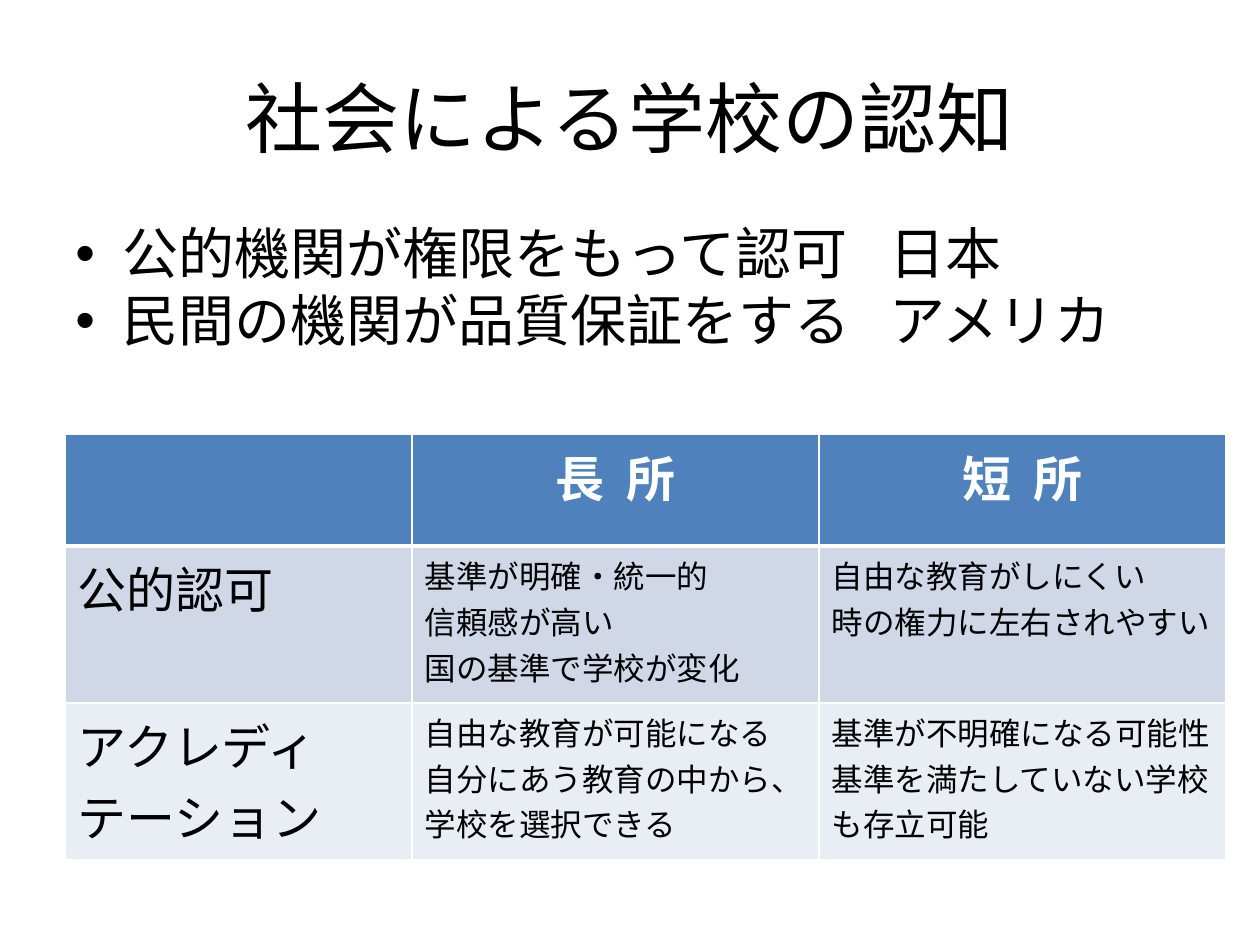
from dataclasses import dataclass

import lxml.etree
import pptx
import pptx.dml.color
import pptx.enum.text
import pptx.oxml.ns
import pptx.util

PX = 914400 // 126


@dataclass(frozen=True)
class Theme:
    font: str = "Calibri"
    black: str = "000000"
    white: str = "FFFFFF"
    header_fill: str = "4F81BD"
    row_fills: tuple[str, ...] = ("D0D8E8", "E9EDF4")
    title_size: int = 44
    bullet_size: int = 32
    label_size: int = 28
    detail_size: int = 18


@dataclass(frozen=True)
class Box:
    left: int
    top: int
    width: int
    height: int

    def emu(self) -> tuple[int, ...]:
        return tuple(v * PX for v in (self.left, self.top, self.width, self.height))


@dataclass(frozen=True)
class TableRow:
    label: str
    strengths: str
    weaknesses: str


THEME = Theme()
ALIGN = pptx.enum.text.PP_ALIGN
TITLE_BOX = Box(63, 38, 1134, 158)
BULLET_BOX = Box(63, 220, 1134, 624)
TABLE_BOX = Box(65, 434, 1161, 426)
COLUMN_WIDTHS = (347, 407, 407)
ROW_HEIGHTS = (112, 157, 157)
BULLET_INDENT = 47
COUNTRY_TAB = 814

BULLETS = ("公的機関が権限をもって認可\t日本", "民間の機関が品質保証をする\tアメリカ")
HEADINGS = ("", "長 所", "短 所")
ROWS = (
    TableRow("公的認可", "基準が明確・統一的\n信頼感が高い\n国の基準で学校が変化",
             "自由な教育がしにくい\n時の権力に左右されやすい"),
    TableRow("アクレディテーション", "自由な教育が可能になる\n自分にあう教育の中から、学校を選択できる",
             "基準が不明確になる可能性\n基準を満たしていない学校も存立可能"),
)


def add_child(parent, tag: str, **attributes):
    return lxml.etree.SubElement(parent, pptx.oxml.ns.qn(tag), attributes)


def format_text(text_frame, size: int, color: str = THEME.black, bold: bool = False, align=ALIGN.LEFT) -> None:
    for paragraph in text_frame.paragraphs:
        paragraph.alignment = align
        for run in paragraph.runs:
            run.font.name = THEME.font
            run.font.size = pptx.util.Pt(size)
            run.font.bold = bold
            run.font.color.rgb = pptx.dml.color.RGBColor.from_string(color)


def add_text_box(slide, box: Box, text: str):
    text_frame = slide.shapes.add_textbox(*box.emu()).text_frame
    text_frame.word_wrap = True
    text_frame.text = text
    return text_frame


def add_bullets(slide) -> None:
    text_frame = add_text_box(slide, BULLET_BOX, "\n".join(BULLETS))
    for index, paragraph in enumerate(text_frame.paragraphs):
        paragraph.line_spacing = 0.9
        if index:
            paragraph.space_before = pptx.util.Pt(3.5)
        properties = paragraph._p.get_or_add_pPr()
        properties.set("marL", str(BULLET_INDENT * PX))
        properties.set("indent", str(-BULLET_INDENT * PX))
        add_child(properties, "a:buFont", typeface="Arial")
        add_child(properties, "a:buChar", char="•")
        tabs = add_child(properties, "a:tabLst")
        add_child(tabs, "a:tab", pos=str(COUNTRY_TAB * PX), algn="l")
    format_text(text_frame, THEME.bullet_size)


def style_cell(cell, fill: str, is_header: bool, below_header: bool) -> None:
    # Borders come before the fill in the cell properties
    properties = cell._tc.get_or_add_tcPr()
    for side in "LRTB":
        thick = (is_header and side == "B") or (below_header and side == "T")
        line = add_child(properties, f"a:ln{side}", w=str(pptx.util.Pt(3 if thick else 1)))
        add_child(add_child(line, "a:solidFill"), "a:srgbClr", val=THEME.white)
    cell.fill.solid()
    cell.fill.fore_color.rgb = pptx.dml.color.RGBColor.from_string(fill)


def add_comparison_table(slide) -> None:
    table = slide.shapes.add_table(len(ROW_HEIGHTS), len(COLUMN_WIDTHS), *TABLE_BOX.emu()).table
    table.first_row = False
    table.horz_banding = False
    for column, width in zip(table.columns, COLUMN_WIDTHS):
        column.width = width * PX
    for row, height in zip(table.rows, ROW_HEIGHTS):
        row.height = height * PX

    # Header row, with widely set headings
    for column_index, heading in enumerate(HEADINGS):
        cell = table.cell(0, column_index)
        cell.text_frame.text = heading
        format_text(cell.text_frame, THEME.label_size, THEME.white, True, ALIGN.CENTER)
        for run in cell.text_frame.paragraphs[0].runs:
            run.font._element.set("spc", "300")
        style_cell(cell, THEME.header_fill, True, False)

    # Body rows
    for row_index, (row, fill) in enumerate(zip(ROWS, THEME.row_fills), start=1):
        for column_index, text in enumerate((row.label, row.strengths, row.weaknesses)):
            cell = table.cell(row_index, column_index)
            cell.text_frame.text = text
            format_text(cell.text_frame, THEME.detail_size if column_index else THEME.label_size)
            style_cell(cell, fill, False, row_index == 1)


def main() -> None:
    presentation = pptx.Presentation()
    presentation.slide_width = 1260 * PX
    presentation.slide_height = 945 * PX
    slide = presentation.slides.add_slide(presentation.slide_layouts[6])

    # Title
    title = add_text_box(slide, TITLE_BOX, "社会による学校の認知")
    title.vertical_anchor = pptx.enum.text.MSO_ANCHOR.MIDDLE
    format_text(title, THEME.title_size, align=ALIGN.CENTER)

    # Bullets and table
    add_bullets(slide)
    add_comparison_table(slide)
    presentation.save("out.pptx")


if __name__ == "__main__":
    main()
